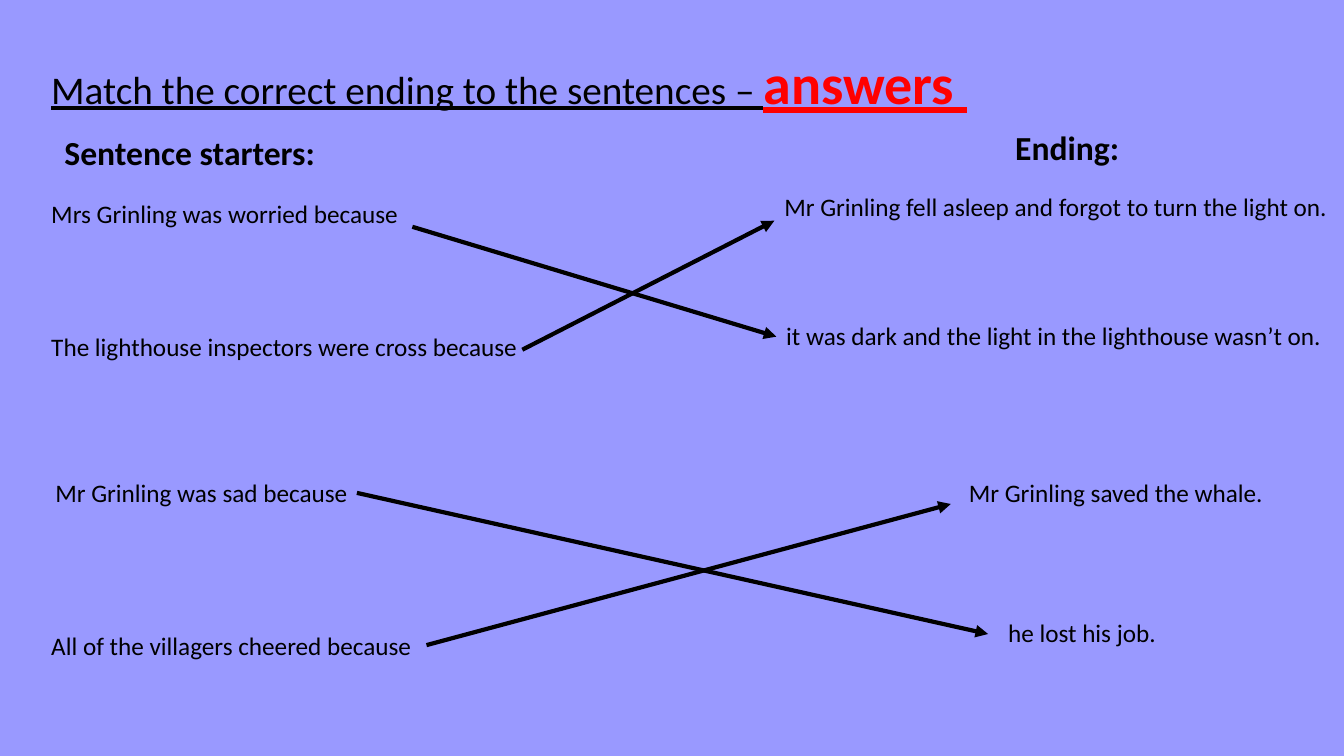
from lxml.etree import SubElement
from pptx import Presentation
from pptx.dml.color import RGBColor
from pptx.enum.shapes import MSO_CONNECTOR as Connector
from pptx.enum.text import MSO_AUTO_SIZE as AutoSize
from pptx.oxml.ns import qn
from pptx.util import Inches, Pt

COLOURS = {"background": "9999FF", "ink": "000000", "answer": "FF0000"}
TITLE = {"size": Pt(28), "underline": True}
ANSWER = {"size": Pt(40), "underline": True, "bold": True}
HEADING = {"size": Pt(24), "bold": True}
SENTENCE = {"size": Pt(18)}

HEADINGS = [
    ("Sentence starters:", 0.54, 1.26, 2.79),
    ("Ending:", 9.97, 1.21, 1.32),
]
STARTERS = [
    ("Mrs Grinling was worried because", 0.41, 1.92, 3.68),
    ("The lighthouse inspectors were cross because", 0.41, 3.24, 4.88),
    ("Mr Grinling was sad because", 0.45, 4.69, 3.14),
    ("All of the villagers cheered because", 0.41, 6.2, 3.82),
]
ENDINGS = [
    ("Mr Grinling fell asleep and forgot to turn the light on.", 7.68, 1.85, 5.65),
    ("it was dark and the light in the lighthouse wasn’t on.", 7.7, 3.13, 5.63),
    ("Mr Grinling saved the whale.", 9.51, 4.69, 3.15),
    ("he lost his job.", 9.9, 6.08, 1.68),
]
MATCHES = [
    (4.09, 2.25, 7.7, 3.34),
    (5.18, 3.47, 7.68, 2.19),
    (3.54, 4.89, 9.8, 6.29),
    (4.23, 6.4, 9.43, 5),
]


def add_text(page, place, spans, wrap=False):
    """Add a one-paragraph text box made of (text, format, colour) spans."""
    box = page.shapes.add_textbox(*map(Inches, place))
    frame = box.text_frame
    frame.word_wrap = wrap
    frame.auto_size = AutoSize.SHAPE_TO_FIT_TEXT
    para = frame.paragraphs[0]
    for text, style, colour in spans:
        span = para.add_run()
        span.text = text
        for name, value in {"name": "Calibri", **style}.items():
            setattr(span.font, name, value)
        span.font.color.rgb = RGBColor.from_string(COLOURS[colour])


def add_labels(page, labels, height, style):
    """Add a group of labels that share a height and a text style."""
    for text, left, top, width in labels:
        add_text(page, (left, top, width, height), [(text, style, "ink")])


def add_arrow(page, ends):
    """Draw an arrow from a sentence starter to its ending."""
    arrow = page.shapes.add_connector(Connector.STRAIGHT, *map(Inches, ends))
    arrow.line.width = Pt(3)
    arrow.line.color.rgb = RGBColor.from_string(COLOURS["ink"])
    SubElement(arrow.line._get_or_add_ln(), qn("a:tailEnd"), type="triangle")
    SubElement(arrow._element.spPr, qn("a:effectLst"))


def main():
    """Build the matching exercise and save it."""
    deck = Presentation()
    deck.slide_width, deck.slide_height = Inches(13.33), Inches(7.5)
    page = deck.slides.add_slide(deck.slide_layouts[6])
    fill = page.background.fill
    fill.solid()
    fill.fore_color.rgb = RGBColor.from_string(COLOURS["background"])

    title = [
        ("Match the correct ending to the sentences – ", TITLE, "ink"),
        ("answers ", ANSWER, "answer"),
    ]
    add_text(page, (0.41, 0.43, 10.61, 0.77), title, wrap=True)
    add_labels(page, HEADINGS, 0.5, HEADING)
    add_labels(page, STARTERS + ENDINGS, 0.4, SENTENCE)
    for ends in MATCHES:
        add_arrow(page, ends)
    deck.save("out.pptx")


if __name__ == "__main__":
    main()
